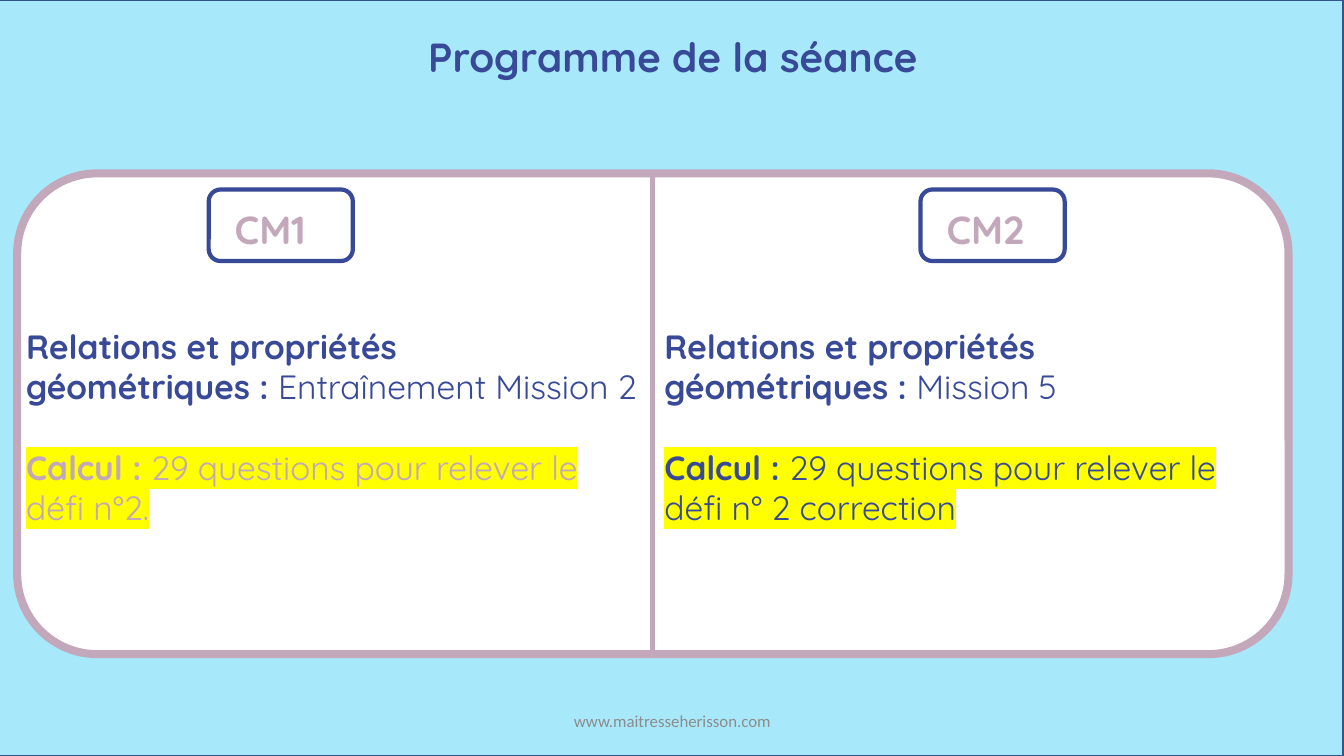
"""Build the lesson programme slide for the CM1 and CM2 groups."""
from dataclasses import dataclass

import lxml.etree
import pptx
import pptx.dml.color
import pptx.enum.shapes
import pptx.enum.text
import pptx.oxml.ns
import pptx.util

EMU_PER_PX = 9144
NAVY, MAUVE, SKY, WHITE, YELLOW = "374997", "C3A7BA", "A7E8FB", "FFFFFF", "FFFF00"
LEFT = pptx.enum.text.PP_ALIGN.LEFT
CENTER = pptx.enum.text.PP_ALIGN.CENTER
TOP = pptx.enum.text.MSO_ANCHOR.TOP
MIDDLE = pptx.enum.text.MSO_ANCHOR.MIDDLE
RECTANGLE = pptx.enum.shapes.MSO_SHAPE.RECTANGLE
ROUNDED = pptx.enum.shapes.MSO_SHAPE.ROUNDED_RECTANGLE


@dataclass(frozen=True)
class Box:
    """Position and size in px, 100 to the inch."""

    left: int
    top: int
    width: int
    height: int


@dataclass(frozen=True)
class Style:
    """Look of a run of text."""

    size: int
    color: str
    bold: bool = False
    font: str = "Quicksand"
    highlight: str = ""


@dataclass(frozen=True)
class Group:
    """One class group: its badge and its two tasks."""

    name: str
    badge_left: int
    list_left: int
    geometry: str
    calculation: str
    calculation_color: str


GROUPS = [
    Group("CM1", 207, 16, "Entraînement Mission 2",
          "29 questions pour relever le défi n°2.", MAUVE),
    Group("CM2", 913, 649, "Mission 5",
          "29 questions pour relever le défi n° 2 correction", NAVY),
]


def px(value: int) -> int:
    """Turn px into EMU."""
    return pptx.util.Emu(value * EMU_PER_PX)


def rgb(color: str) -> pptx.dml.color.RGBColor:
    """Turn a hex string into a colour."""
    return pptx.dml.color.RGBColor.from_string(color)


def place(shape, box: Box) -> None:
    """Move and size a shape."""
    shape.left, shape.top = px(box.left), px(box.top)
    shape.width, shape.height = px(box.width), px(box.height)


def add_panel(slide, kind, box: Box, fill: str, line: str, weight: float) -> None:
    """Draw a filled and outlined shape."""
    shape = slide.shapes.add_shape(kind, 0, 0, 0, 0)
    place(shape, box)
    shape.shadow.inherit = False
    shape.fill.solid()
    shape.fill.fore_color.rgb = rgb(fill)
    shape.line.color.rgb = rgb(line)
    shape.line.width = pptx.util.Pt(weight)


def add_divider(slide, x: int, top: int, bottom: int) -> None:
    """Draw the vertical line between the groups."""
    line = slide.shapes.add_connector(
        pptx.enum.shapes.MSO_CONNECTOR.STRAIGHT, px(x), px(top), px(x), px(bottom))
    line.line.color.rgb = rgb(MAUVE)
    line.line.width = pptx.util.Pt(4)
    properties = line.element.find(pptx.oxml.ns.qn("p:spPr"))
    lxml.etree.SubElement(properties, pptx.oxml.ns.qn("a:effectLst"))


def format_run(run, style: Style) -> None:
    """Apply a style to a run."""
    run.font.size = pptx.util.Pt(style.size)
    run.font.bold = style.bold
    run.font.color.rgb = rgb(style.color)
    if style.highlight:
        properties = run.font.fill._xPr
        highlight = lxml.etree.SubElement(properties, pptx.oxml.ns.qn("a:highlight"))
        lxml.etree.SubElement(
            highlight, pptx.oxml.ns.qn("a:srgbClr"), val=style.highlight)
    run.font.name = style.font


def prepare_frame(shape, box: Box, anchor=TOP):
    """Place a text shape and return its frame."""
    place(shape, box)
    frame = shape.text_frame
    frame.word_wrap = True
    frame.auto_size = pptx.enum.text.MSO_AUTO_SIZE.NONE
    frame.vertical_anchor = anchor
    return frame


def write_line(shape, box: Box, text: str, style: Style, align, anchor=TOP) -> None:
    """Fill a text shape with a single line."""
    frame = prepare_frame(shape, box, anchor)
    frame.text = text
    paragraph = frame.paragraphs[0]
    paragraph.alignment = align
    format_run(paragraph.runs[0], style)


def write_task(paragraph, label: str, text: str, color: str,
               highlight: str, gap: int) -> None:
    """Write a bold label followed by its task, without a bullet."""
    properties = paragraph._p.get_or_add_pPr()
    properties.set("marL", "0")
    properties.set("indent", "0")
    lxml.etree.SubElement(properties, pptx.oxml.ns.qn("a:buNone"))
    paragraph.space_before = pptx.util.Pt(gap)
    paragraph.text = label
    paragraph.add_run().text = text
    for run, bold in zip(paragraph.runs, (True, False)):
        format_run(run, Style(24, color, bold, highlight=highlight))


def add_group(slide, group: Group, body) -> None:
    """Draw the badge of a group and write its tasks."""
    add_panel(slide, ROUNDED, Box(group.badge_left, 188, 143, 71), WHITE, NAVY, 3)
    write_line(slide.shapes.add_textbox(0, 0, 0, 0),
               Box(group.badge_left + 16, 199, 110, 57),
               group.name, Style(28, MAUVE, True), LEFT)
    frame = prepare_frame(body, Box(group.list_left, 318, 630, 212))
    write_task(frame.paragraphs[0], "Relations et propriétés géométriques : ",
               group.geometry, NAVY, "", 0)
    write_task(frame.add_paragraph(), "Calcul : ", group.calculation,
               group.calculation_color, YELLOW, 29)


def main() -> None:
    """Build and save the presentation."""
    presentation = pptx.Presentation()
    presentation.slide_width, presentation.slide_height = px(1333), px(750)
    slide = presentation.slides.add_slide(presentation.slide_layouts[3])
    title, *bodies = list(slide.placeholders)

    add_panel(slide, RECTANGLE, Box(-1, 0, 1333, 750), SKY, "325491", 1)
    add_panel(slide, ROUNDED, Box(17, 172, 1261, 477), WHITE, MAUVE, 5.75)
    add_divider(slide, 647, 172, 649)
    write_line(title, Box(1, 27, 1333, 59), "Programme de la séance",
               Style(29, NAVY, True), CENTER)
    for group, body in zip(GROUPS, bodies):
        add_group(slide, group, body)
    write_line(slide.shapes.add_textbox(0, 0, 0, 0), Box(442, 695, 450, 40),
               "www.maitresseherisson.com", Style(12, "8C8C8C", font="Calibri"),
               CENTER, MIDDLE)

    for placeholder in (title, *bodies):
        slide.shapes.element.append(placeholder.element)
    presentation.save("out.pptx")


if __name__ == "__main__":
    main()
